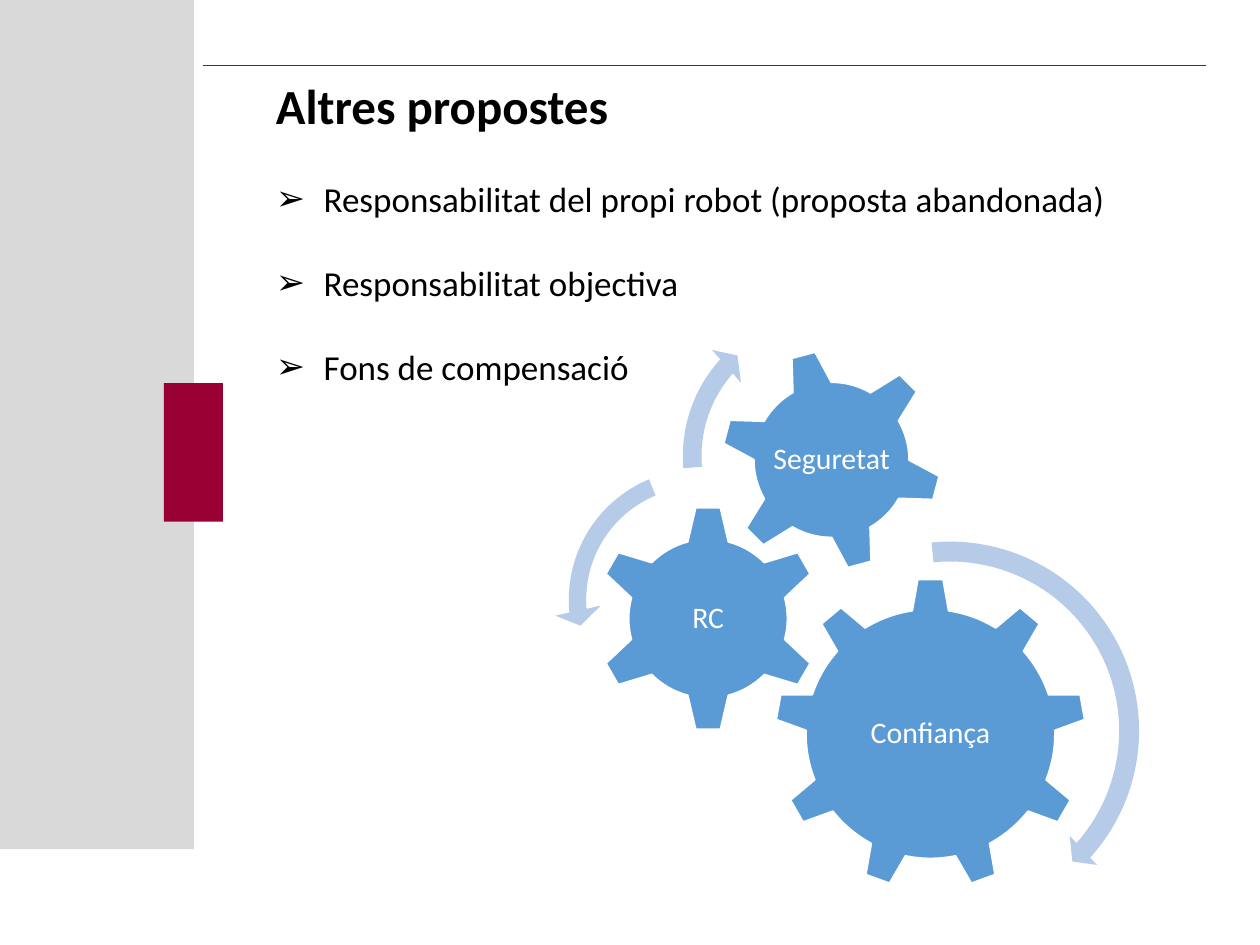
from dataclasses import dataclass
from typing import Optional

from lxml.etree import SubElement
from pptx import Presentation
from pptx.dml.color import RGBColor
from pptx.enum.shapes import MSO_CONNECTOR as Conn, MSO_SHAPE as Shape
from pptx.enum.text import MSO_ANCHOR as Anchor, MSO_AUTO_SIZE as AutoSize, PP_ALIGN as Align
from pptx.oxml.ns import qn
from pptx.util import Inches, Pt

COLUMNS, ROWS = 100, 75
FONT = "Calibri"
BLACK = RGBColor(0x00, 0x00, 0x00)
WHITE = RGBColor(0xFF, 0xFF, 0xFF)
GREY = RGBColor(0xD9, 0xD9, 0xD9)
MAROON = RGBColor(0x99, 0x00, 0x33)
RED = RGBColor(0xC0, 0x00, 0x00)
BLUE = RGBColor(0x5B, 0x9B, 0xD5)
PALE_BLUE = RGBColor(0xB5, 0xCB, 0xE7)

prs = Presentation()
prs.slide_width, prs.slide_height = Inches(10), Inches(7.5)
CELL_W, CELL_H = prs.slide_width / COLUMNS, prs.slide_height / ROWS


@dataclass(frozen=True)
class Box:
    col: float
    row: float
    cols: float
    rows: float

    def emu(self) -> tuple[int, int, int, int]:
        return (round(self.col * CELL_W), round(self.row * CELL_H),
                round(self.cols * CELL_W), round(self.rows * CELL_H))

    def centred(self, cols: float, rows: float) -> "Box":
        return Box(self.col + (self.cols - cols) / 2,
                   self.row + (self.rows - rows) / 2, cols, rows)


@dataclass(frozen=True)
class Gear:
    label: str
    kind: Shape
    box: Box
    label_cols: float
    label_rows: float
    rotation: float = 0


@dataclass(frozen=True)
class Arrow:
    kind: Shape
    box: Box
    adjustments: tuple[float, ...]


BULLETS = (
    "Responsabilitat del propi robot (proposta abandonada)",
    "Responsabilitat objectiva",
    "Fons de compensació",
)
GEARS = (
    Gear("Confiança", Shape.GEAR_9, Box(61.5, 45.9, 24.7, 24.7), 14.8, 12.7),
    Gear("RC", Shape.GEAR_6, Box(47.2, 40.1, 18, 18), 8.9, 8.9),
    Gear("Seguretat", Shape.GEAR_6, Box(57.2, 27.7, 17.6, 17.6), 9.9, 9.9, 345),
)
ARROWS = (
    Arrow(Shape.CIRCULAR_ARROW, Box(59.6, 42.2, 31.6, 31.6),
          (0.05, 2.99, 25.14, 158.66, 0.05)),
    Arrow(Shape.LEFT_CIRCULAR_ARROW, Box(44, 36.1, 23, 23),
          (0.06, 4.3, 104.89, 148.38, 0.08)),
    Arrow(Shape.CIRCULAR_ARROW, Box(53.2, 23.8, 24.8, 24.8),
          (0.06, 3.94, 133.14, 105.08, 0.07)),
)


def write(sp, *lines: str, size: float, color: RGBColor = BLACK, bold: bool = False,
          align: Align = Align.LEFT, anchor: Anchor = Anchor.TOP,
          bullet: Optional[str] = None, gap: float = 0,
          spacing: float = 1, inset: Optional[float] = None) -> None:
    tf = sp.text_frame
    tf.word_wrap = True
    tf.auto_size = AutoSize.NONE
    tf.vertical_anchor = anchor
    if inset is not None:
        tf.margin_left = tf.margin_right = tf.margin_top = tf.margin_bottom = Inches(inset)
    for i, line in enumerate(lines):
        p = tf.add_paragraph() if i else tf.paragraphs[0]
        p.alignment = align
        p.line_spacing = spacing
        p.space_before = Pt(gap if i else 0)
        if bullet:
            pPr = p._p.get_or_add_pPr()
            pPr.set("marL", str(Inches(0.38)))
            pPr.set("indent", str(-Inches(0.38)))
            SubElement(pPr, qn("a:buFont"), typeface="Wingdings 3" if bullet == "" else "Arial")
            SubElement(pPr, qn("a:buChar"), char=bullet)
        r = p.add_run()
        r.text = line
        r.font.name, r.font.size = FONT, Pt(size)
        r.font.bold, r.font.color.rgb = bold, color


def add_solid(slide, kind: Shape, box: Box, fill: RGBColor, outline: Optional[RGBColor] = None):
    sp = slide.shapes.add_shape(kind, *box.emu())
    sp.shadow.inherit = False
    sp.fill.solid()
    sp.fill.fore_color.rgb = fill
    if outline is None:
        sp.line.fill.background()
    else:
        sp.line.color.rgb, sp.line.width = outline, Pt(1)
    return sp


def add_rule(slide, col: float, row: float, cols: float) -> None:
    x, y, width, _ = Box(col, row, cols, 0).emu()
    line = slide.shapes.add_connector(Conn.STRAIGHT, x, y, x + width, y)
    line.line.color.rgb, line.line.width = RED, Pt(0.5)
    SubElement(line._element.spPr, qn("a:effectLst"))


def add_gear(slide, gear: Gear) -> None:
    add_solid(slide, gear.kind, gear.box, BLUE, WHITE).rotation = gear.rotation
    label = gear.box.centred(gear.label_cols, gear.label_rows)
    write(slide.shapes.add_textbox(*label.emu()), gear.label, size=17, color=WHITE,
          align=Align.CENTER, anchor=Anchor.MIDDLE, spacing=0.9, inset=0.02)


def add_arrow(slide, arrow: Arrow) -> None:
    sp = add_solid(slide, arrow.kind, arrow.box, PALE_BLUE)
    for i, value in enumerate(arrow.adjustments):
        sp.adjustments[i] = value


def main() -> None:
    slide = prs.slides.add_slide(prs.slide_layouts[5])
    add_solid(slide, Shape.RECTANGLE, Box(0, 0, 15.4, 67.4), GREY)
    add_solid(slide, Shape.RECTANGLE, Box(13, 30.4, 4.7, 11), MAROON)
    add_rule(slide, 16.1, 5.2, 79.6)

    title = slide.shapes.title
    title.left, title.top, title.width, title.height = Box(20.9, 5.5, 73.2, 6).emu()
    write(title, "Altres propostes", size=28, bold=True)
    body = slide.shapes.add_textbox(*Box(20.9, 13.6, 73.2, 27.9).emu())
    write(body, *BULLETS, size=20, bullet="➢", gap=24)

    for gear in GEARS:
        add_gear(slide, gear)
    for arrow in ARROWS:
        add_arrow(slide, arrow)
    prs.save("out.pptx")


if __name__ == "__main__":
    main()
